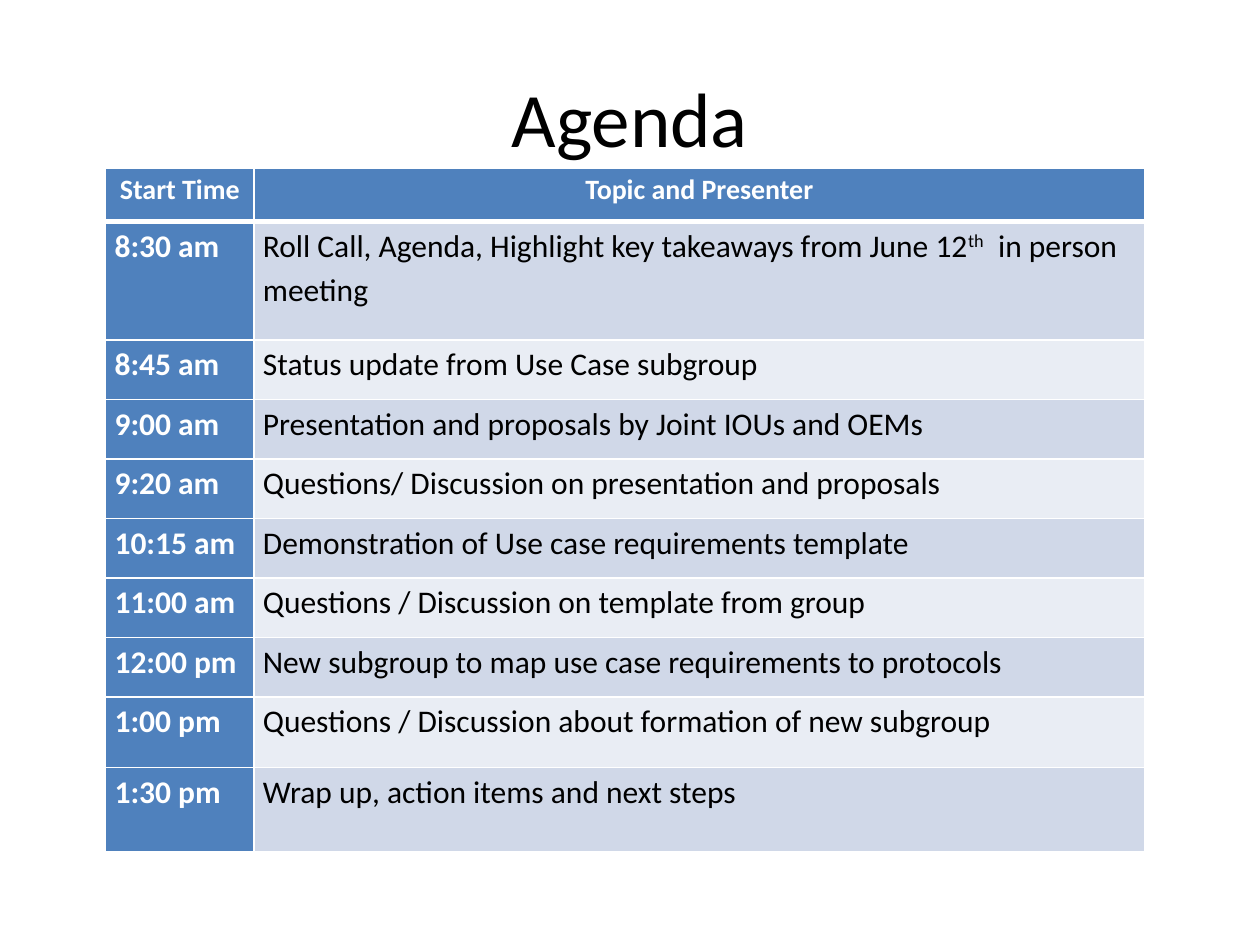
"""Build the meeting agenda slide with its timetable."""
from collections import namedtuple

from lxml import etree
from pptx import Presentation
from pptx.dml.color import RGBColor
from pptx.enum.text import MSO_ANCHOR, PP_ALIGN
from pptx.oxml.ns import qn
from pptx.util import Cm, Pt

CENTER, LEFT = PP_ALIGN.CENTER, PP_ALIGN.LEFT
MIDDLE, TOP = MSO_ANCHOR.MIDDLE, MSO_ANCHOR.TOP

Theme = namedtuple("Theme", "font black white blue bands title header body")
THEME = Theme("Calibri", "000000", "FFFFFF", "4F81BD", ("D0D8E8", "E9EDF4"), 44, 16, 18)

AGENDA = [
    ("Start Time", "Topic and Presenter", 1.07),
    ("8:30 am", "Roll Call, Agenda, Highlight key takeaways from June 12", 2.39),
    ("8:45 am", "Status update from Use Case subgroup", 1.2),
    ("9:00 am", "Presentation and proposals by Joint IOUs and OEMs", 1.2),
    ("9:20 am", "Questions/ Discussion on presentation and proposals", 1.2),
    ("10:15 am", "Demonstration of Use case requirements template", 1.2),
    ("11:00 am", "Questions / Discussion on template from group", 1.2),
    ("12:00 pm", "New subgroup to map use case requirements to protocols", 1.2),
    ("1:00 pm", "Questions / Discussion about formation of new subgroup", 1.42),
    ("1:30 pm", "Wrap up, action items and next steps", 1.7),
]
COL_WIDTHS = (2.99, 17.96)


def style_paragraph(p, size, color, bold, align):
    p.alignment = align
    for r in p.runs:
        r.font.name = THEME.font
        r.font.size = Pt(size)
        r.font.bold = bold
        r.font.color.rgb = RGBColor.from_string(color)


def add_border(cell, side, width):
    ln = etree.SubElement(cell._tc.get_or_add_tcPr(), qn(f"a:{side}"), w=str(Pt(width)))
    fill = etree.SubElement(ln, qn("a:solidFill"))
    etree.SubElement(fill, qn("a:srgbClr"), val=THEME.white)


prs = Presentation()
prs.slide_width, prs.slide_height = Cm(25.4), Cm(19.05)
s = prs.slides.add_slide(prs.slide_layouts[6])

tf = s.shapes.add_textbox(Cm(1.27), Cm(0.76), Cm(22.86), Cm(3.18)).text_frame
tf.word_wrap = True
tf.vertical_anchor = MIDDLE
tf.text = "Agenda"
style_paragraph(tf.paragraphs[0], THEME.title, THEME.black, False, CENTER)

table = s.shapes.add_table(len(AGENDA), len(COL_WIDTHS), Cm(2.13), Cm(3.39),
                           Cm(sum(COL_WIDTHS)), Cm(sum(row[2] for row in AGENDA))).table
for column, width in zip(table.columns, COL_WIDTHS):
    column.width = Cm(width)

for i, (time, topic, height) in enumerate(AGENDA):
    table.rows[i].height = Cm(height)
    for j, text in enumerate((time, topic)):
        cell = table.cell(i, j)
        cell.margin_left = cell.margin_right = Cm(0.18)
        cell.margin_top = cell.margin_bottom = Cm(0)
        cell.vertical_anchor = TOP
        accent = i == 0 or j == 0
        cell.text_frame.text = text
        p = cell.text_frame.paragraphs[0]
        p.line_spacing = 1.15
        if (i, j) == (1, 1):
            ordinal = p.add_run()
            ordinal.text = "th"
            ordinal.font._element.set("baseline", "30000")
            p.add_run().text = "  in person meeting"
        style_paragraph(p, THEME.body if i else THEME.header,
                        THEME.white if accent else THEME.black, accent,
                        LEFT if i else CENTER)
        for side in ("lnL", "lnR", "lnT", "lnB"):
            under_header = (i, side) in ((0, "lnB"), (1, "lnT"))
            add_border(cell, side, 3 if under_header else 1)
        cell.fill.solid()
        cell.fill.fore_color.rgb = RGBColor.from_string(
            THEME.blue if accent else THEME.bands[(i - 1) % 2])

prs.save("out.pptx")
